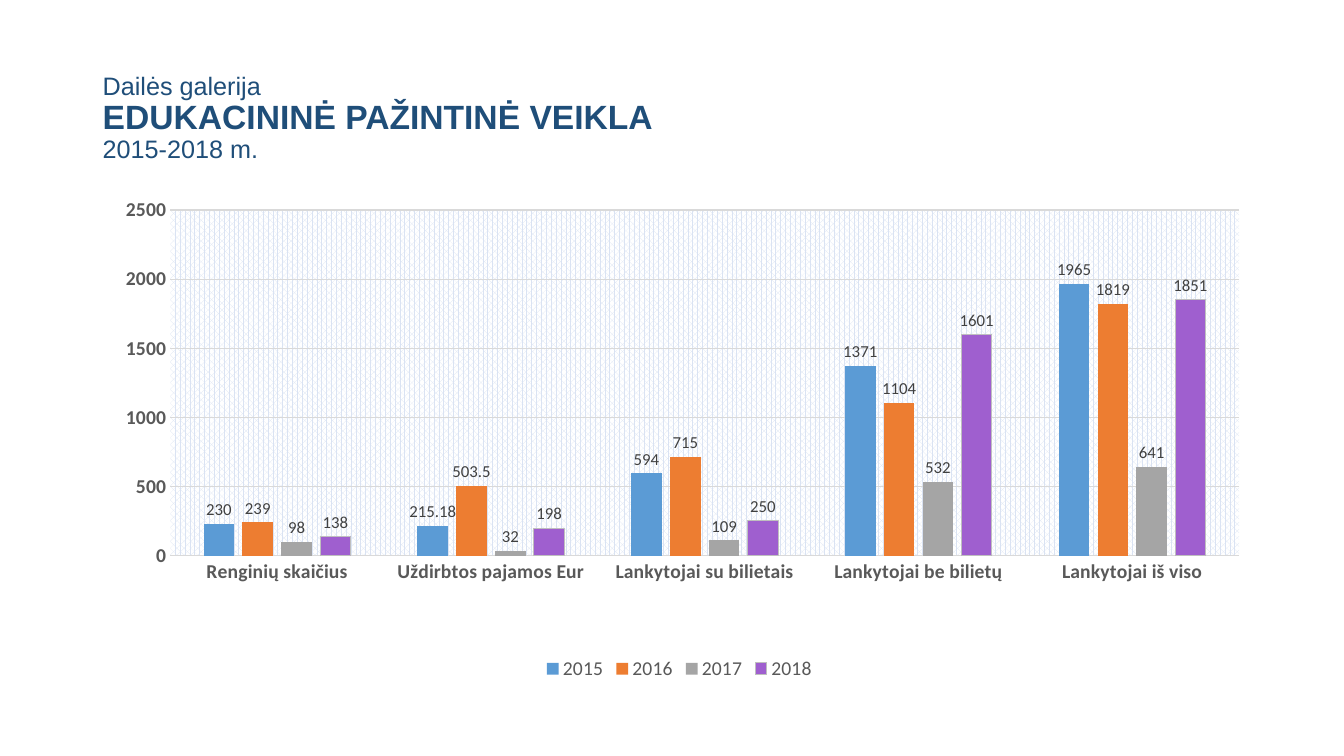
import dataclasses

import lxml.etree
import pptx
import pptx.chart.data
import pptx.dml.color
import pptx.enum.chart
import pptx.enum.text
import pptx.oxml
import pptx.oxml.ns
import pptx.util

SLIDE_WIDTH = pptx.util.Inches(13.33)
SLIDE_HEIGHT = pptx.util.Inches(7.5)


@dataclasses.dataclass(frozen=True)
class Theme:
    heading_font: str = "Arial"
    chart_font: str = "Calibri"
    heading: str = "1F4E79"
    axis_text: str = "595959"
    label_text: str = "404040"
    grid: str = "D9D9D9"
    outline: str = "BFBFBF"
    pattern: str = "DAE3F3"
    background: str = "FFFFFF"
    years: tuple = ("5B9BD5", "ED7D31", "A5A5A5", "9F5FCF")
    title_size: int = 24
    subtitle_size: int = 18
    axis_size: int = 14
    label_size: int = 12
    hairline: float = 0.75


THEME = Theme()

HEADING = (
    ("Dailės galerija", THEME.subtitle_size, False),
    ("EDUKACININĖ PAŽINTINĖ VEIKLA", THEME.title_size, True),
    ("2015-2018 m.", THEME.subtitle_size, False),
)
INDICATORS = (
    "Renginių skaičius",
    "Uždirbtos pajamos Eur",
    "Lankytojai su bilietais",
    "Lankytojai be bilietų",
    "Lankytojai iš viso",
)
RESULTS = {
    "2015": (230, 215.18, 594, 1371, 1965),
    "2016": (239, 503.5, 715, 1104, 1819),
    "2017": (98, 32, 109, 532, 641),
    "2018": (138, 198, 250, 1601, 1851),
}


def share_box(left, top, width, height):
    """Turn shares of the slide's size into lengths."""
    return (int(SLIDE_WIDTH * left), int(SLIDE_HEIGHT * top),
            int(SLIDE_WIDTH * width), int(SLIDE_HEIGHT * height))


def rgb(value):
    return pptx.dml.color.RGBColor.from_string(value)


def style_font(font, name, size, color, bold=False):
    font.name = name
    font.size = pptx.util.Pt(size)
    font.bold = bold
    font.color.rgb = rgb(color)


def add_text(paragraph, text, **font_format):
    run = paragraph.add_run()
    run.text = text
    style_font(run.font, **font_format)


def style_line(line, color):
    line.color.rgb = rgb(color)
    line.width = pptx.util.Pt(THEME.hairline)


def add_heading(slide, box):
    frame = slide.shapes.add_textbox(*box).text_frame
    frame.word_wrap = True
    frame.vertical_anchor = pptx.enum.text.MSO_ANCHOR.BOTTOM
    paragraph = frame.paragraphs[0]
    paragraph.line_spacing = 0.9
    for number, (text, size, bold) in enumerate(HEADING):
        if number:
            paragraph.add_line_break()
        add_text(paragraph, text, name=THEME.heading_font, size=size,
                 color=THEME.heading, bold=bold)


def style_plot_area(chart, left, top, width, height):
    """Place the inner plot area by shares of the chart and give it a pattern."""
    plot_area = chart.element.find(".//" + pptx.oxml.ns.qn("c:plotArea"))
    for layout in plot_area.findall(pptx.oxml.ns.qn("c:layout")):
        plot_area.remove(layout)
    namespaces = pptx.oxml.ns.nsdecls("c", "a")
    plot_area.insert(0, pptx.oxml.parse_xml(
        f'<c:layout {namespaces}><c:manualLayout><c:layoutTarget val="inner"/>'
        f'<c:xMode val="edge"/><c:yMode val="edge"/><c:x val="{left}"/>'
        f'<c:y val="{top}"/><c:w val="{width}"/><c:h val="{height}"/>'
        f'</c:manualLayout></c:layout>'))
    plot_area.append(pptx.oxml.parse_xml(
        f'<c:spPr {namespaces}><a:pattFill prst="pct70">'
        f'<a:fgClr><a:srgbClr val="{THEME.pattern}"/></a:fgClr>'
        f'<a:bgClr><a:srgbClr val="{THEME.background}"/></a:bgClr>'
        f'</a:pattFill><a:ln><a:noFill/></a:ln></c:spPr>'))


def add_results_chart(slide, box):
    results = pptx.chart.data.CategoryChartData()
    results.categories = INDICATORS
    for year, values in RESULTS.items():
        results.add_series(year, values)
    chart = slide.shapes.add_chart(
        pptx.enum.chart.XL_CHART_TYPE.COLUMN_CLUSTERED, *box, results).chart
    chart.has_title = False
    style_font(chart.font, THEME.chart_font, 10, "000000")
    style_plot_area(chart, 0.058, 0.038, 0.928, 0.7)

    # Columns and their values
    columns = chart.plots[0]
    columns.gap_width, columns.overlap = 219, -27
    columns.vary_by_categories = False
    for year, color in zip(columns.series, THEME.years):
        year.format.fill.solid()
        year.format.fill.fore_color.rgb = rgb(color)
        year.format.line.fill.background()
        labels = year.data_labels
        labels.show_value = True
        labels.position = pptx.enum.chart.XL_LABEL_POSITION.OUTSIDE_END
        style_font(labels.font, THEME.chart_font, THEME.label_size, THEME.label_text)
    style_line(columns.series[-1].format.line, THEME.outline)

    # Axes
    indicators, amounts = chart.category_axis, chart.value_axis
    for axis in (indicators, amounts):
        axis.major_tick_mark = pptx.enum.chart.XL_TICK_MARK.NONE
        axis.minor_tick_mark = pptx.enum.chart.XL_TICK_MARK.NONE
        style_font(axis.tick_labels.font, THEME.chart_font, THEME.axis_size,
                   THEME.axis_text, bold=True)
    style_line(indicators.format.line, THEME.grid)
    amounts.format.line.fill.background()
    amounts.minimum_scale, amounts.maximum_scale, amounts.major_unit = 0, 2500, 500
    amounts.has_major_gridlines = True
    style_line(amounts.major_gridlines.format.line, THEME.grid)

    # Legend
    chart.has_legend = True
    chart.legend.position = pptx.enum.chart.XL_LEGEND_POSITION.BOTTOM
    chart.legend.include_in_layout = False
    style_font(chart.legend.font, THEME.chart_font, THEME.axis_size, THEME.axis_text)


def main():
    presentation = pptx.Presentation()
    presentation.slide_width = SLIDE_WIDTH
    presentation.slide_height = SLIDE_HEIGHT
    slide = presentation.slides.add_slide(presentation.slide_layouts[6])
    add_heading(slide, share_box(0.069, 0.067, 0.865, 0.157))
    add_results_chart(slide, share_box(0.077, 0.253, 0.857, 0.653))
    presentation.save("out.pptx")


if __name__ == "__main__":
    main()
